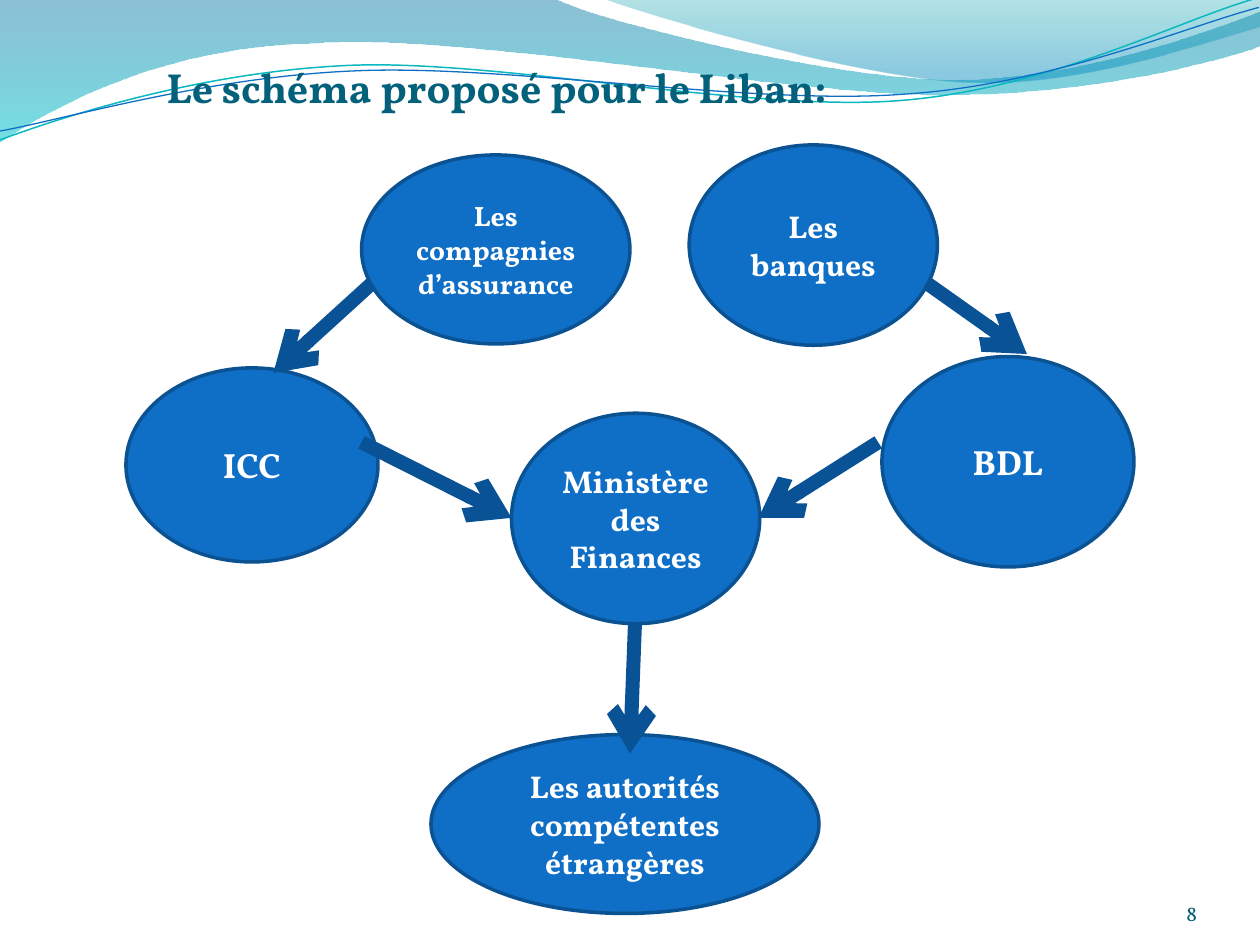
from lxml import etree
from pptx import Presentation
from pptx.dml.color import RGBColor
from pptx.enum.shapes import MSO_CONNECTOR, MSO_SHAPE
from pptx.enum.text import MSO_ANCHOR, MSO_AUTO_SIZE, PP_ALIGN
from pptx.oxml.ns import qn
from pptx.util import Inches, Pt

ELLIPSE = MSO_SHAPE.OVAL
STRAIGHT = MSO_CONNECTOR.STRAIGHT
CENTER, RIGHT = PP_ALIGN.CENTER, PP_ALIGN.RIGHT
MIDDLE, BOTTOM, TOP = MSO_ANCHOR.MIDDLE, MSO_ANCHOR.BOTTOM, MSO_ANCHOR.TOP
GROW = MSO_AUTO_SIZE.SHAPE_TO_FIT_TEXT
FONT = "Vollkorn"
COLOURS = {
    "node": "0F6FC6", "outline": "0B5292", "arrow": "095295",
    "label": "FFFFFF", "title": "04617B", "number": "045D75",
    "band_top": "0074A1", "band_end": "00C6CF",
    "crest_top": "00A1A9", "crest_end": "008BBF", "teal_line": "0AB8BF",
}

deck = Presentation()
deck.slide_width, deck.slide_height = Inches(10), Inches(7.5)
slide = deck.slides.add_slide(deck.slide_layouts[6])
shapes = slide.shapes

# Grid of 100 columns by 75 rows
COL = deck.slide_width / 100
ROW = deck.slide_height / 75


def colour(name):
    return RGBColor.from_string(COLOURS[name])


def write(shape, text, size, colour_name, bold, align, anchor):
    frame = shape.text_frame
    frame.word_wrap = True
    frame.vertical_anchor = anchor
    para = frame.paragraphs[0]
    para.alignment = align
    span = para.add_run()
    span.text = text
    span.font.name, span.font.size, span.font.bold = FONT, Pt(size), bold
    span.font.color.rgb = colour(colour_name)


# Waves at the top: a pair is a straight step, six numbers are a cubic curve
# Fill: (colour, position, opacity) stops; line: (colour, width, rotation)
waves = [
    ([(0, 0), (44, -0.1), (47.6, 1.7, 66.4, 6.3, 75.8, 6.3),
      (85.3, 6.3, 95.8, 2.6, 100, 0.9), (100.1, 3.6),
      (98.3, 4.4, 87, 7.6, 74.6, 7.5), (62.2, 7.5, 38.2, 2.8, 25.7, 3.4),
      (12.9, 3.6, 4.6, 8.3, -0.1, 11.3), (0, 0)],
     [("band_top", 0, 45), ("band_end", 1, 55)], None),
    ([(47.9, -0.1), (50.9, 1.1, 68.2, 6.2, 76.9, 6.5),
      (85.6, 6.9, 96.1, 3.2, 100, 2.1), (100, 0), (47.9, -0.1)],
     [("crest_top", 0, 30), ("crest_end", 0.8, 45)], None),
    ([(-0.2, 8.75), (4.7, 7.2, 15.85, 4.1, 27.75, 4.15),
      (39.6, 4.2, 59.1, 9.35, 71.2, 9), (83.2, 8.65, 94, 3.55, 100, 2.2)],
     None, ("teal_line", 0.85, 357.3)),
    ([(-0.2, 8.05), (4.6, 7.45, 16.45, 4.5, 28.35, 4.6),
      (40.35, 4.65, 59.55, 8.85, 71.6, 8.5), (83.5, 8.3, 94.2, 4.2, 100.1, 2.95)],
     None, ("node", 0.75, 357.3)),
]
for steps, stops, line in waves:
    places = [(round(step[i] * COL), round(step[i + 1] * ROW))
              for step in steps for i in range(0, len(step), 2)]
    builder = shapes.build_freeform(*places[0], scale=1.0)
    builder.add_line_segments(places[1:], close=stops is not None)
    wave = builder.convert_to_shape()
    wave.shadow.inherit = False

    # Gather each three points of a curved step into one cubic curve
    segments = iter(list(wave._element.iter(qn("a:lnTo"))))
    for step in steps[1:]:
        segment = next(segments)
        if len(step) == 6:
            segment.addprevious(etree.Element(qn("a:cubicBezTo")))
            curve = segment.getprevious()
            for part in (segment, next(segments), next(segments)):
                curve.append(part[0])
                part.getparent().remove(part)

    if stops:
        wave.line.fill.background()
        wave.fill.gradient()
        wave.fill.gradient_angle = 270
        for stop, (name, position, opacity) in zip(wave.fill.gradient_stops, stops):
            stop.color.rgb = colour(name)
            stop.position = position
        for tint, (_, _, opacity) in zip(wave._element.spPr.iter(qn("a:srgbClr")), stops):
            etree.SubElement(tint, qn("a:alpha"), val=str(opacity * 1000))
    else:
        name, width, wave.rotation = line
        wave.fill.background()
        wave.line.color.rgb = colour(name)
        wave.line.width = Pt(width)

# Institutions: text, font size, left, top, width, height
nodes = [
    ("Les compagnies d’assurance", 16, 28.7, 12.3, 21.3, 15),
    ("ICC", 20, 10, 29.2, 20, 15.4),
    ("Ministère des Finances", 18, 40.6, 32.8, 19.7, 16.7),
    ("Les autorités compétentes étrangères", 18, 34.2, 58.3, 30.8, 14.2),
    ("Les banques", 18, 54.7, 11.5, 19.7, 15.9),
    ("BDL", 20, 70, 28.3, 20, 16.7),
]
for text, size, left, top, width, height in nodes:
    node = shapes.add_shape(ELLIPSE, round(left * COL), round(top * ROW),
                            round(width * COL), round(height * ROW))
    node.shadow.inherit = False
    node.fill.solid()
    node.fill.fore_color.rgb = colour("node")
    node.line.color.rgb = colour("outline")
    node.line.width = Pt(2)
    write(node, text, size, "label", True, CENTER, MIDDLE)

# Arrows of the reporting chain: start x, start y, end x, end y
arrows = [
    (29.5, 22.5, 21.7, 29.6),
    (73.6, 22.5, 81.5, 28.1),
    (28.7, 35.1, 40.6, 41.1),
    (50.4, 49.4, 50, 59.8),
    (69.7, 35.1, 60.2, 41.1),
]
for x1, y1, x2, y2 in arrows:
    arrow = shapes.add_connector(STRAIGHT, round(x1 * COL), round(y1 * ROW),
                                 round(x2 * COL), round(y2 * ROW))
    arrow.line.color.rgb = colour("arrow")
    arrow.line.width = Pt(8)
    etree.SubElement(arrow.line._get_or_add_ln(), qn("a:tailEnd"), type="arrow")
    etree.SubElement(arrow._element.spPr, qn("a:effectLst"))

# Page number
number = shapes.add_textbox(round(86.7 * COL), round(69.5 * ROW),
                            round(8.3 * COL), round(4 * ROW))
frame = number.text_frame
frame.margin_left = frame.margin_right = frame.margin_top = frame.margin_bottom = 0
write(number, "8", 12, "number", False, RIGHT, BOTTOM)

# Title
title = shapes.add_textbox(round(8.3 * COL), round(4.4 * ROW),
                           round(62.2 * COL), round(5 * ROW))
title.text_frame.auto_size = GROW
write(title, "Le schéma proposé pour le Liban:", 24, "title", True, CENTER, TOP)

deck.save("out.pptx")
